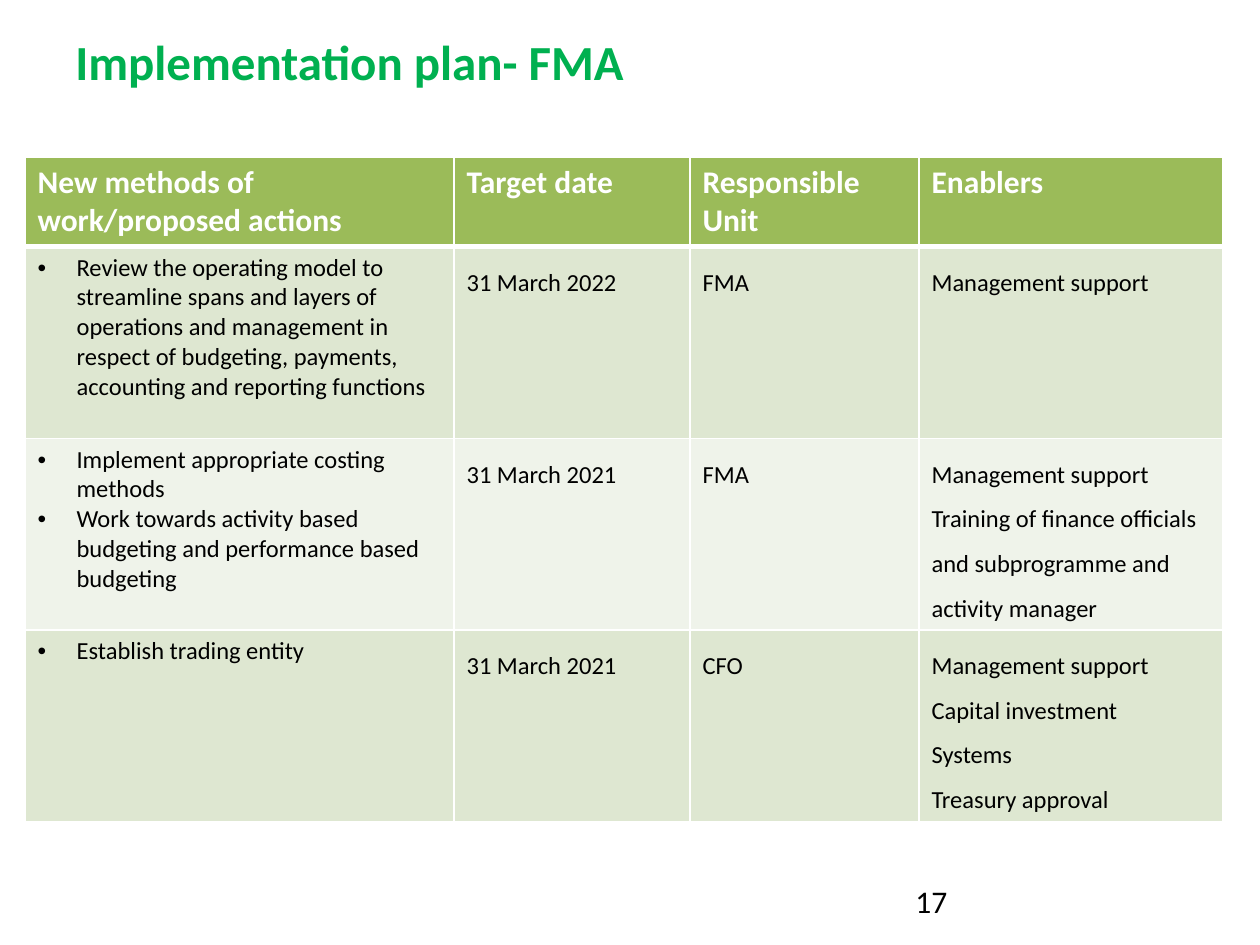
"""Build the FMA implementation plan slide."""
from dataclasses import dataclass

from lxml import etree
from pptx import Presentation, util as u
from pptx.dml.color import RGBColor
from pptx.oxml import ns

SCALE = 914400 / 126


@dataclass(frozen=True)
class Theme:
    font: str = "Calibri"
    title: str = "00B050"
    head: str = "9BBB59"
    bands: tuple[str, str] = ("DEE7D1", "EFF3EA")
    light: str = "FFFFFF"
    dark: str = "000000"
    big: int = 28
    mid: int = 18
    small: int = 14


@dataclass(frozen=True)
class Label:
    words: str
    box: tuple[int, int, int, int]
    size: int
    color: str
    bold: bool = False


@dataclass(frozen=True)
class Action:
    steps: tuple[str, ...]
    date: str
    unit: str
    needs: tuple[str, ...]


@dataclass(frozen=True)
class Look:
    fill: str
    color: str
    size: int
    bold: bool = False
    bullet: bool = False
    space: float = 1.0
    top: int = 1
    base: int = 1


THEME = Theme()
LABELS = (
    Label("Implementation plan- FMA", (63, 25, 1134, 72), THEME.big, THEME.title, True),
    Label("17", (903, 876, 294, 50), THEME.mid, THEME.dark),
)
HEADS = ("New methods of work/proposed actions", "Target date", "Responsible Unit", "Enablers")
ACTIONS = (
    Action(
        ("Review the operating model to streamline spans and layers of operations and "
         "management in respect of budgeting, payments, accounting and reporting functions",),
        "31 March 2022", "FMA", ("Management support",),
    ),
    Action(
        ("Implement appropriate costing methods",
         "Work towards activity based budgeting and performance based budgeting"),
        "31 March 2021", "FMA",
        ("Management support",
         "Training of finance officials and subprogramme and activity manager"),
    ),
    Action(
        ("Establish trading entity",), "31 March 2021", "CFO",
        ("Management support", "Capital investment", "Systems", "Treasury approval"),
    ),
)
WIDTHS = (429, 236, 229, 304)
HEIGHTS = (88, 192, 191, 191)


def px(num: int) -> u.Emu:
    """Turn pixels into EMU."""
    return u.Emu(round(num * SCALE))


def style(para, size: int, color: str, bold: bool) -> None:
    """Set the font of a paragraph."""
    font = para.font
    font.name, font.size, font.bold = THEME.font, u.Pt(size), bold
    font.color.rgb = RGBColor.from_string(color)


def add_label(slide, label: Label) -> None:
    """Add one line of text in a box."""
    frame = slide.shapes.add_textbox(*map(px, label.box)).text_frame
    frame.word_wrap = True
    frame.text = label.words
    style(frame.paragraphs[0], label.size, label.color, label.bold)


def add_bullet(para) -> None:
    """Give a paragraph a hanging bullet."""
    props = para._p.get_or_add_pPr()
    props.set("marL", str(px(39)))
    props.set("indent", str(px(-39)))
    etree.SubElement(props, ns.qn("a:buFont"), typeface="Arial")
    etree.SubElement(props, ns.qn("a:buChar"), char="•")


def add_edges(cell, top: int, base: int) -> None:
    """Draw the four borders of a cell."""
    props = cell._tc.get_or_add_tcPr()
    for side, width in zip("LRTB", (1, 1, top, base)):
        line = etree.SubElement(props, ns.qn(f"a:ln{side}"), w=str(u.Pt(width)))
        fill = etree.SubElement(line, ns.qn("a:solidFill"))
        etree.SubElement(fill, ns.qn("a:srgbClr"), val=THEME.light)


def fill_cell(cell, lines: tuple[str, ...], look: Look) -> None:
    """Write and style one table cell."""
    add_edges(cell, look.top, look.base)
    cell.fill.solid()
    cell.fill.fore_color.rgb = RGBColor.from_string(look.fill)
    cell.text = "\n".join(lines)
    for para in cell.text_frame.paragraphs:
        para.line_spacing = look.space
        if look.bullet:
            add_bullet(para)
        style(para, look.size, look.color, look.bold)


def add_plan(slide) -> None:
    """Add the table of actions."""
    box = (25, 157, sum(WIDTHS), sum(HEIGHTS))
    table = slide.shapes.add_table(len(HEIGHTS), len(WIDTHS), *map(px, box)).table
    for col, width in zip(table.columns, WIDTHS):
        col.width = px(width)
    for row, height in zip(table.rows, HEIGHTS):
        row.height = px(height)
    head = Look(THEME.head, THEME.light, THEME.mid, bold=True, base=3)
    for col, words in enumerate(HEADS):
        fill_cell(table.cell(0, col), (words,), head)
    for row, act in enumerate(ACTIONS, 1):
        cells = (act.steps, (act.date,), (act.unit,), act.needs)
        for col, lines in enumerate(cells):
            look = Look(
                THEME.bands[(row - 1) % 2], THEME.dark, THEME.small,
                bullet=col == 0, space=1.5 if col else 1.0, top=3 if row == 1 else 1,
            )
            fill_cell(table.cell(row, col), lines, look)


def main() -> None:
    """Build and save the slide."""
    deck = Presentation()
    deck.slide_width, deck.slide_height = px(1260), px(945)
    slide = deck.slides.add_slide(deck.slide_layouts[6])
    add_plan(slide)
    for label in LABELS:
        add_label(slide, label)
    deck.save("out.pptx")


if __name__ == "__main__":
    main()
